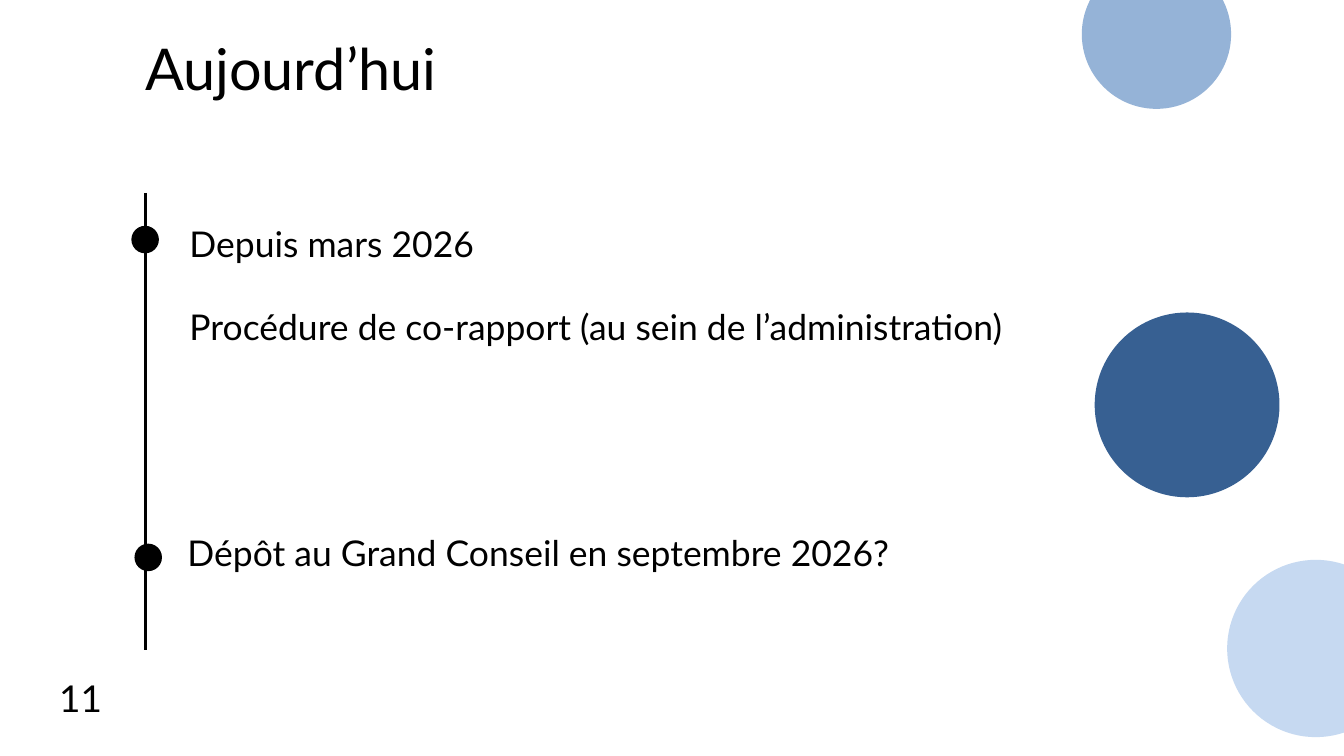
from dataclasses import dataclass

from pptx import Presentation
from pptx.dml.color import RGBColor
from pptx.enum.shapes import MSO_CONNECTOR, MSO_SHAPE
from pptx.enum.text import MSO_ANCHOR
from pptx.oxml.ns import qn
from pptx.slide import Slide
from pptx.util import Pt
from lxml.etree import SubElement


@dataclass(frozen=True)
class Theme:
    font: str = "Lato"
    ink: str = "000000"
    pale_blue: str = "C6D9F1"
    mid_blue: str = "95B3D7"
    deep_blue: str = "376092"
    title_size: float = 61.7
    body_size: float = 38
    number_size: float = 39.6
    title_leading: float = 71.6
    body_leading: float = 44.1
    number_leading: float = 55.5
    axis_weight: float = 3


@dataclass(frozen=True)
class Disc:
    center_x: float
    center_y: float
    diameter: float
    color: str


@dataclass(frozen=True)
class Label:
    left: float
    top: float
    width: float
    height: float
    size: float
    leading: float
    lines: tuple[str, ...]


THEME = Theme()
AXIS_X, AXIS_TOP, AXIS_BOTTOM = 155.5, 206.6, 696.2
DOT = 29.5

DISCS = (
    Disc(1409.8, 694.8, 190, THEME.pale_blue),
    Disc(1239.1, 36.7, 160, THEME.mid_blue),
    Disc(1271.9, 433.8, 198, THEME.deep_blue),
    Disc(AXIS_X, 256.7, DOT, THEME.ink),
    Disc(158.8, 597.2, DOT, THEME.ink),
)

LABELS = (
    Label(63.4, 715.7, 92.9, 53.3, THEME.number_size, THEME.number_leading, ("11",)),
    Label(AXIS_X, 38.2, 899.3, 72.7, THEME.title_size, THEME.title_leading,
          ("Aujourd’hui",)),
    Label(203, 239.8, 1039, 133.2, THEME.body_size, THEME.body_leading,
          ("Depuis mars 2026",
           "Procédure de co-rapport (au sein de l’administration)")),
    Label(200.9, 570.2, 1039, 88.6, THEME.body_size, THEME.body_leading,
          ("Dépôt au Grand Conseil en septembre 2026?",)),
)


def draw_axis(slide: Slide) -> None:
    axis = slide.shapes.add_connector(
        MSO_CONNECTOR.STRAIGHT, Pt(AXIS_X), Pt(AXIS_TOP), Pt(AXIS_X), Pt(AXIS_BOTTOM))
    axis.line.color.rgb = RGBColor.from_string(THEME.ink)
    axis.line.width = Pt(THEME.axis_weight)
    SubElement(axis._element.spPr, qn("a:effectLst"))


def draw_disc(slide: Slide, disc: Disc) -> None:
    circle = slide.shapes.add_shape(
        MSO_SHAPE.OVAL,
        Pt(disc.center_x - disc.diameter / 2), Pt(disc.center_y - disc.diameter / 2),
        Pt(disc.diameter), Pt(disc.diameter))
    circle.shadow.inherit = False
    circle.fill.solid()
    circle.fill.fore_color.rgb = RGBColor.from_string(disc.color)
    circle.line.fill.background()


def draw_label(slide: Slide, label: Label) -> None:
    """Write one paragraph per line, with an empty line's height between them."""
    frame = slide.shapes.add_textbox(
        Pt(label.left), Pt(label.top), Pt(label.width), Pt(label.height)).text_frame
    frame_format = {
        "word_wrap": True, "vertical_anchor": MSO_ANCHOR.TOP,
        "margin_left": 0, "margin_top": 0, "margin_right": 0, "margin_bottom": 0,
    }
    for attribute, value in frame_format.items():
        setattr(frame, attribute, value)
    for index, line in enumerate(label.lines):
        paragraph = frame.add_paragraph() if index else frame.paragraphs[0]
        paragraph.line_spacing = Pt(label.leading)
        if index:
            paragraph.space_before = Pt(label.leading)
        run = paragraph.add_run()
        run.text = line
        for attribute, value in {"name": THEME.font, "size": Pt(label.size)}.items():
            setattr(run.font, attribute, value)
        run.font.color.rgb = RGBColor.from_string(THEME.ink)


def main() -> None:
    presentation = Presentation()
    presentation.slide_width, presentation.slide_height = Pt(1440), Pt(810)
    slide = presentation.slides.add_slide(presentation.slide_layouts[6])
    draw_axis(slide)
    for disc in DISCS:
        draw_disc(slide, disc)
    for label in LABELS:
        draw_label(slide, label)
    presentation.save("out.pptx")


if __name__ == "__main__":
    main()
